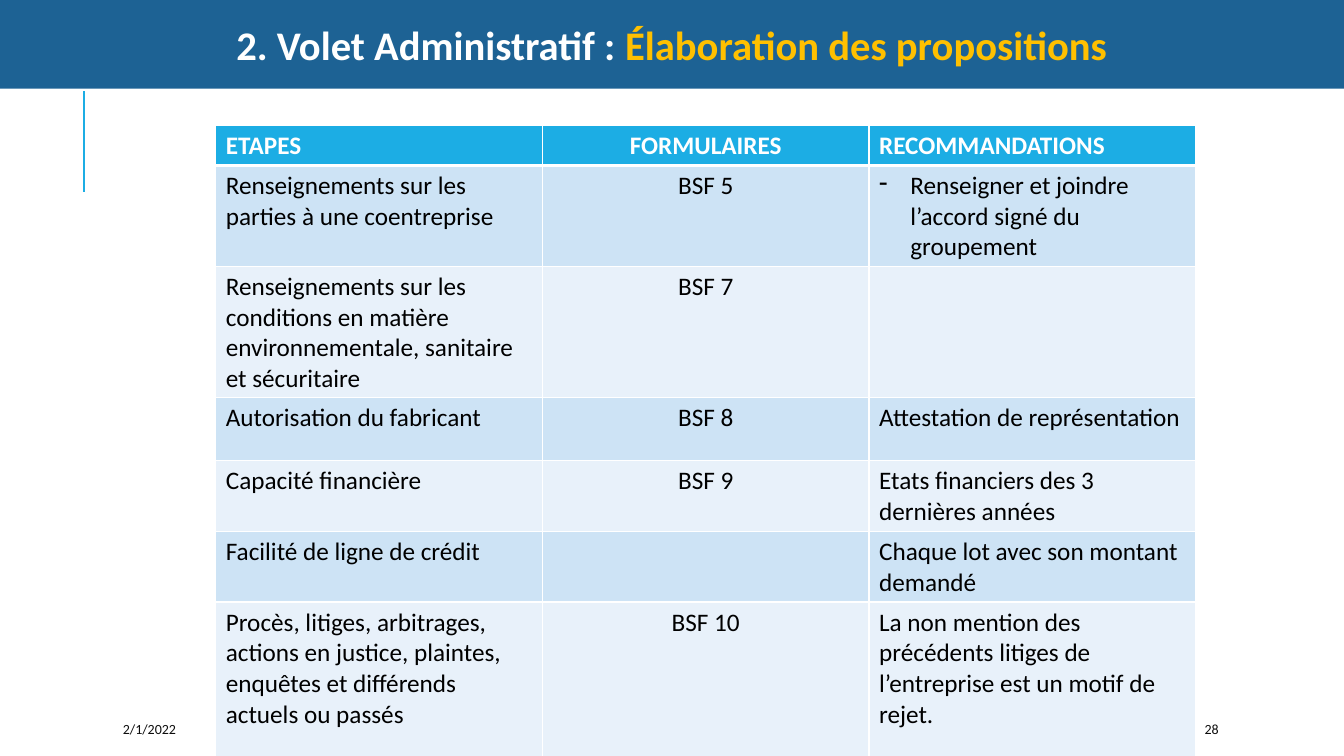
"""Build the slide on the forms required to prepare administrative proposals."""
from lxml import etree
from pptx import Presentation
from pptx.dml.color import RGBColor
from pptx.enum.shapes import MSO_CONNECTOR, MSO_SHAPE
from pptx.enum.text import MSO_ANCHOR, PP_ALIGN
from pptx.oxml.ns import qn
from pptx.util import Inches, Pt

LEFT, CENTER = PP_ALIGN.LEFT, PP_ALIGN.CENTER
MIDDLE = MSO_ANCHOR.MIDDLE
RECTANGLE, STRAIGHT = MSO_SHAPE.RECTANGLE, MSO_CONNECTOR.STRAIGHT

THEME = {
    "font": "Calibri",
    "banner": "1D6294", "accent": "1CADE4", "highlight": "FFC000",
    "bands": ("CDE3F5", "E8F1FA"),
    "white": "FFFFFF", "black": "000000", "footer": "0D0D0D",
    "title_size": 29, "table_size": 18, "footer_size": 10,
}
WIDTH, HEIGHT = 13.33, 7.5
BANNER_HEIGHT = 0.88
TABLE_LEFT, TABLE_TOP, COLUMN_WIDTH = 2.14, 1.24, 3.24
ROW_HEIGHTS = (0.38, 0.96, 1.24, 0.63, 0.67, 0.67, 1.58)
ALIGNMENTS = (LEFT, CENTER, LEFT)
ROWS = (
    ("ETAPES", "FORMULAIRES", "RECOMMANDATIONS"),
    ("Renseignements sur les parties à une coentreprise", "BSF 5",
     "- Renseigner et joindre l’accord signé du groupement"),
    ("Renseignements sur les conditions en matière environnementale, "
     "sanitaire et sécuritaire", "BSF 7", ""),
    ("Autorisation du fabricant", "BSF 8", "Attestation de représentation"),
    ("Capacité financière", "BSF 9", "Etats financiers des 3 dernières années"),
    ("Facilité de ligne de crédit", "", "Chaque lot avec son montant demandé"),
    ("Procès, litiges, arbitrages, actions en justice, plaintes, enquêtes "
     "et différends actuels ou passés", "BSF 10",
     "La non mention des précédents litiges de l’entreprise est un motif de rejet."),
)


def add_span(para, text, size, color, bold=False):
    span = para.add_run()
    span.text = text
    formats = {"name": THEME["font"], "size": Pt(size), "bold": bold}
    for name, value in formats.items():
        setattr(span.font, name, value)
    span.font.color.rgb = RGBColor.from_string(color)


def add_border(properties, side, points):
    border = etree.SubElement(properties, qn(f"a:ln{side}"), w=str(Pt(points)))
    fill = etree.SubElement(border, qn("a:solidFill"))
    etree.SubElement(fill, qn("a:srgbClr"), val=THEME["white"])


deck = Presentation()
deck.slide_width, deck.slide_height = Inches(WIDTH), Inches(HEIGHT)
page = deck.slides.add_slide(deck.slide_layouts[6])

rule_x = Inches(WIDTH / 16)
rule = page.shapes.add_connector(STRAIGHT, rule_x, Inches(1.9), rule_x, Inches(0.9))
rule.line.color.rgb = RGBColor.from_string(THEME["accent"])
rule.line.width = Pt(1.5)
etree.SubElement(rule.element.spPr, qn("a:effectLst"))

for text, left, width in (("2/1/2022", 1.12, 2.36), ("28", 11.85, 1.06)):
    box = page.shapes.add_textbox(Inches(left), Inches(7.08), Inches(width), Inches(0.3))
    box.text_frame.word_wrap = True
    box.text_frame.vertical_anchor = MIDDLE
    add_span(box.text_frame.paragraphs[0], text, THEME["footer_size"], THEME["footer"])

banner = page.shapes.add_shape(RECTANGLE, 0, 0, deck.slide_width, Inches(BANNER_HEIGHT))
banner.shadow.inherit = False
banner.fill.solid()
banner.fill.fore_color.rgb = RGBColor.from_string(THEME["banner"])
banner.line.fill.background()
frame_formats = {
    "word_wrap": True, "vertical_anchor": MIDDLE,
    "margin_left": Inches(0.11), "margin_right": Inches(0.11),
    "margin_top": Inches(0.06), "margin_bottom": Inches(0.06),
}
for name, value in frame_formats.items():
    setattr(banner.text_frame, name, value)
title = banner.text_frame.paragraphs[0]
title.alignment = CENTER
for text, color in (("2. Volet Administratif : ", "white"),
                    ("Élaboration des propositions", "highlight")):
    add_span(title, text, THEME["title_size"], THEME[color], bold=True)

table = page.shapes.add_table(
    len(ROWS), len(ALIGNMENTS), Inches(TABLE_LEFT), Inches(TABLE_TOP),
    Inches(COLUMN_WIDTH * len(ALIGNMENTS)), Inches(sum(ROW_HEIGHTS))).table
for column in table.columns:
    column.width = Inches(COLUMN_WIDTH)

for row_index, (texts, height) in enumerate(zip(ROWS, ROW_HEIGHTS)):
    table.rows[row_index].height = Inches(height)
    header = row_index == 0
    fill_color = THEME["accent"] if header else THEME["bands"][(row_index - 1) % 2]
    text_color = THEME["white"] if header else THEME["black"]
    borders = {"L": 1, "R": 1, "T": 3 if row_index == 1 else 1, "B": 3 if header else 1}
    for column_index, (text, alignment) in enumerate(zip(texts, ALIGNMENTS)):
        cell = table.cell(row_index, column_index)
        properties = cell._tc.get_or_add_tcPr()
        for side, points in borders.items():
            add_border(properties, side, points)
        cell.fill.solid()
        cell.fill.fore_color.rgb = RGBColor.from_string(fill_color)
        para = cell.text_frame.paragraphs[0]
        para.alignment = alignment
        if text.startswith("- "):
            bullet_format = para._p.get_or_add_pPr()
            bullet_format.set("marL", str(Inches(0.31)))
            bullet_format.set("indent", str(Inches(-0.31)))
            etree.SubElement(bullet_format, qn("a:buChar"), char="-")
        if text:
            add_span(para, text.removeprefix("- "), THEME["table_size"], text_color, header)

deck.save("out.pptx")
